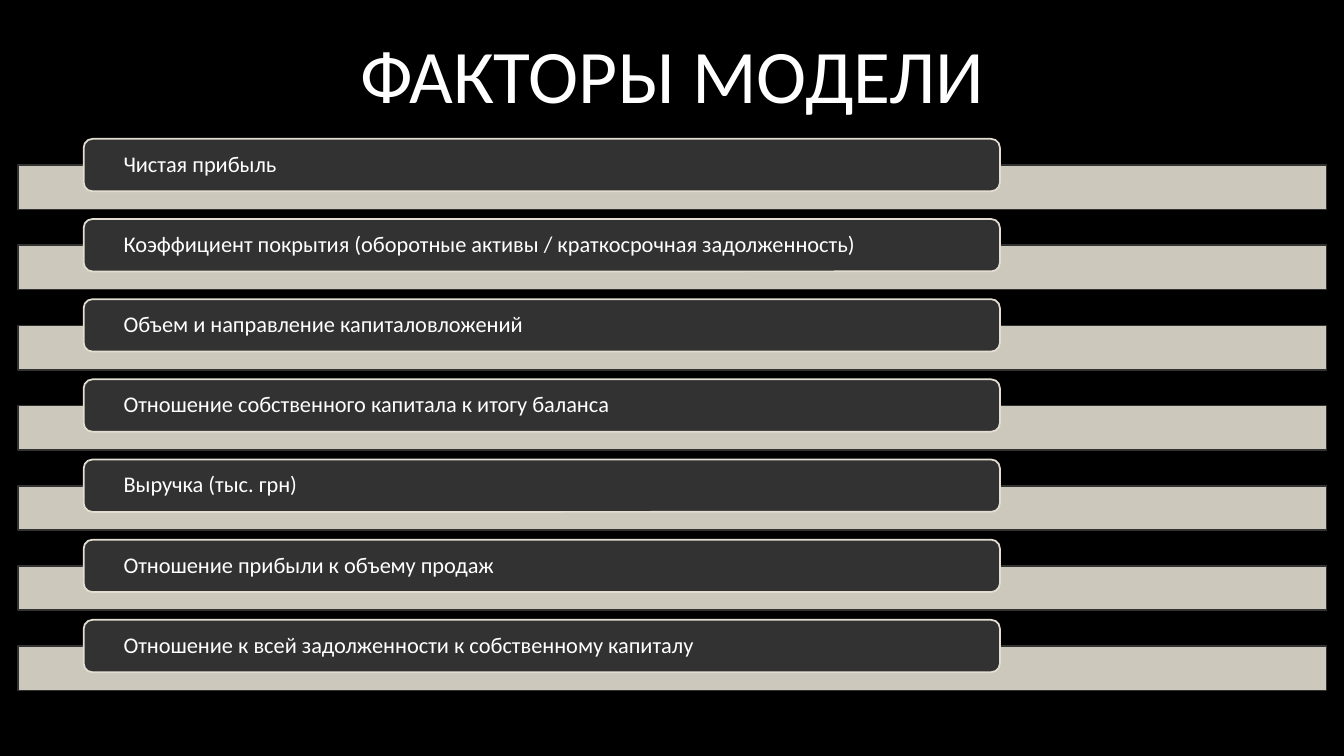
from dataclasses import dataclass

from lxml import etree
from pptx import Presentation
from pptx.dml.color import RGBColor
from pptx.enum.shapes import MSO_SHAPE
from pptx.enum.text import MSO_ANCHOR, PP_ALIGN
from pptx.oxml.ns import qn
from pptx.util import Cm, Pt

RECT = MSO_SHAPE.RECTANGLE
ROUND = MSO_SHAPE.ROUNDED_RECTANGLE
MIDDLE = MSO_ANCHOR.MIDDLE
LEFT = PP_ALIGN.LEFT
CENTER = PP_ALIGN.CENTER


@dataclass(frozen=True)
class Theme:
    font: str = "Calibri"
    back: RGBColor = RGBColor(0, 0, 0)
    dark: RGBColor = RGBColor(0x32, 0x32, 0x32)
    sand: RGBColor = RGBColor(0xE3, 0xDE, 0xD1)
    white: RGBColor = RGBColor(255, 255, 255)
    title: int = 54
    label: int = 16
    line: float = 1.25


class Board:
    def __init__(self, slide, theme):
        self.slide = slide
        self.theme = theme
        fill = slide.background.fill
        fill.solid()
        fill.fore_color.rgb = theme.back

    def words(self, frame, text, size, align):
        frame.vertical_anchor = MIDDLE
        para = frame.paragraphs[0]
        para.text = text
        para.alignment = align
        para.font.name = self.theme.font
        para.font.size = Pt(size)
        para.font.color.rgb = self.theme.white
        return para

    def title(self, text, left, top, width, height):
        head = self.slide.shapes.title
        head.left, head.top = Cm(left), Cm(top)
        head.width, head.height = Cm(width), Cm(height)
        head.text_frame.word_wrap = False
        self.words(head.text_frame, text, self.theme.title, CENTER)

    def box(self, kind, left, top, width, height, fill, line):
        shape = self.slide.shapes.add_shape(
            kind, Cm(left), Cm(top), Cm(width), Cm(height))
        shape.shadow.inherit = False
        shape.fill.solid()
        shape.fill.fore_color.rgb = fill
        shape.line.color.rgb = line
        shape.line.width = Pt(self.theme.line)
        return shape

    def band(self, top):
        shape = self.box(RECT, 0.46, top, 32.97, 1.12,
                         self.theme.sand, self.theme.dark)
        color = shape.element.spPr.find(qn("a:solidFill"))[0]
        etree.SubElement(color, qn("a:alpha")).set("val", "90000")

    def label(self, text, top):
        shape = self.box(ROUND, 2.11, top, 23.09, 1.32,
                         self.theme.dark, self.theme.sand)
        frame = shape.text_frame
        frame.word_wrap = True
        frame.margin_left = frame.margin_right = Cm(0.94)
        frame.margin_top = frame.margin_bottom = 0
        para = self.words(frame, text, self.theme.label, LEFT)
        para.line_spacing = 0.9


FACTORS = (
    "Чистая прибыль",
    "Коэффициент покрытия (оборотные активы / краткосрочная задолженность)",
    "Объем и направление капиталовложений",
    "Отношение собственного капитала к итогу баланса",
    "Выручка (тыс. грн)",
    "Отношение прибыли к объему продаж",
    "Отношение к всей задолженности к собственному капиталу",
)
FIRST = 3.5
STEP = 2.02
DROP = 0.66


def main():
    deck = Presentation()
    deck.slide_width, deck.slide_height = Cm(33.87), Cm(19.05)
    board = Board(deck.slides.add_slide(deck.slide_layouts[5]), Theme())
    board.title("ФАКТОРЫ МОДЕЛИ", 8.1, 0.56, 17.7, 2.57)
    for row, factor in enumerate(FACTORS):
        top = FIRST + row * STEP
        board.band(top + DROP)
        board.label(factor, top)
    deck.save("out.pptx")


if __name__ == "__main__":
    main()
